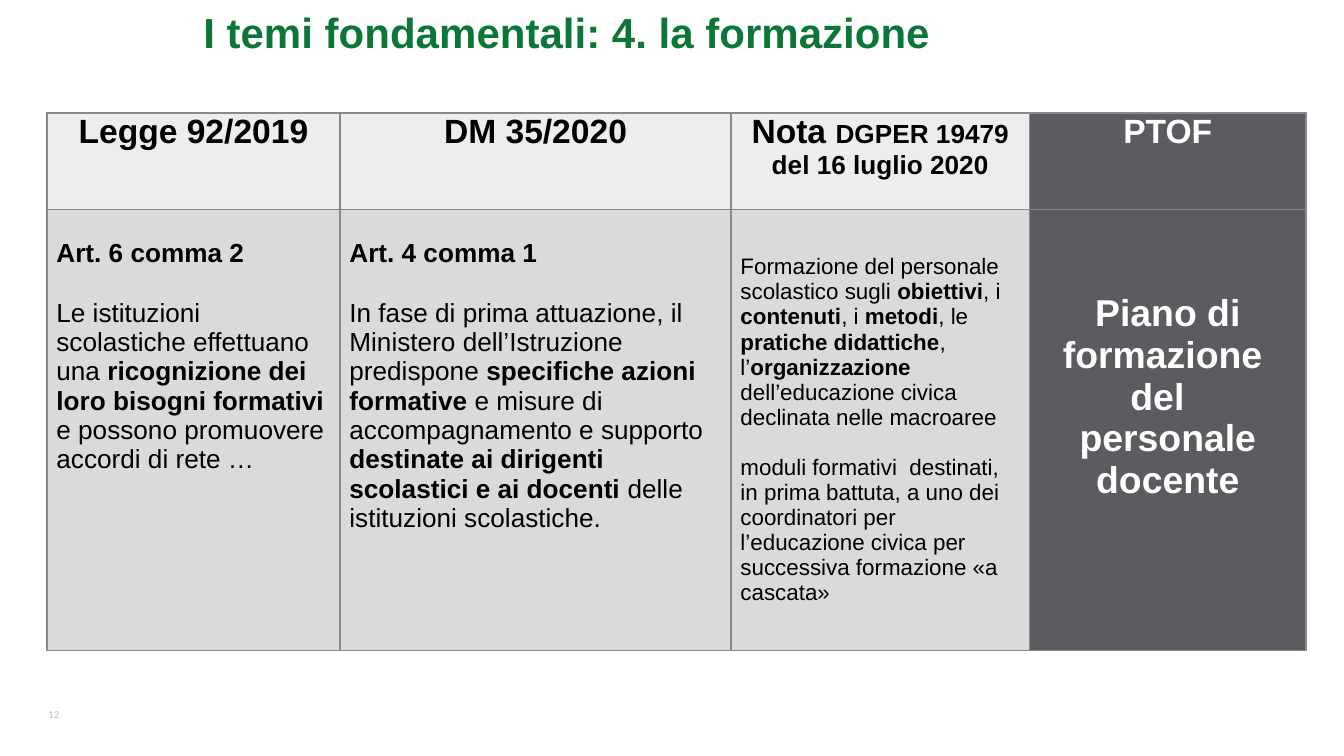
from typing import NamedTuple

from lxml import etree
from pptx import Presentation
from pptx import util as u
from pptx.dml.color import RGBColor
from pptx.enum import text
from pptx.oxml.ns import qn

LEFT, CENTER = text.PP_ALIGN.LEFT, text.PP_ALIGN.CENTER
TOP, MIDDLE = text.MSO_ANCHOR.TOP, text.MSO_ANCHOR.MIDDLE
BORDER = "87898B"
SLIDE_WIDTH = 10


class Line(NamedTuple):
    words: str
    size: float
    bold: bool = False
    before: float = 0
    tail: str = ""
    tail_size: float = 14


class Cell(NamedTuple):
    lines: list[Line]
    fill: str
    color: str = "000000"
    align: text.PP_ALIGN = LEFT
    anchor: text.MSO_ANCHOR = TOP
    side: float = 0.07
    top: float = 0


def rgb(code: str) -> RGBColor:
    return RGBColor.from_string(code)


def write(frame, lines: list[Line], color: str, align, font: str = "Arial") -> None:
    for index, line in enumerate(lines):
        paragraph = frame.add_paragraph() if index else frame.paragraphs[0]
        paragraph.alignment = align
        paragraph.space_before = u.Pt(line.before)
        paragraph.font.name = font
        paragraph.font.size = u.Pt(line.size)
        paragraph.font.bold = line.bold
        paragraph.font.color.rgb = rgb(color)
        for position, words in enumerate(line.words.split("**")):
            if words:
                run = paragraph.add_run()
                run.text = words
                if position % 2:
                    run.font.bold = True
        if line.tail:
            run = paragraph.add_run()
            run.text = line.tail
            run.font.size = u.Pt(line.tail_size)


def add_borders(cell) -> None:
    properties = cell._tc.get_or_add_tcPr()
    for index, side in enumerate(("lnL", "lnR", "lnT", "lnB")):
        border = etree.Element(qn(f"a:{side}"), w=str(u.Pt(1)))
        fill = etree.SubElement(border, qn("a:solidFill"))
        etree.SubElement(fill, qn("a:srgbClr"), val=BORDER)
        properties.insert(index, border)


def fill_cell(cell, content: Cell) -> None:
    cell.fill.solid()
    cell.fill.fore_color.rgb = rgb(content.fill)
    cell.margin_left = cell.margin_right = u.Inches(content.side)
    cell.margin_top, cell.margin_bottom = u.Inches(content.top), 0
    cell.vertical_anchor = content.anchor
    write(cell.text_frame, content.lines, content.color, content.align)
    add_borders(cell)


def add_label(slide, box: tuple, line: Line, color: str, align, font: str, wrap: bool) -> None:
    frame = slide.shapes.add_textbox(*map(u.Inches, box)).text_frame
    frame.margin_left = frame.margin_right = frame.margin_top = frame.margin_bottom = 0
    frame.word_wrap = wrap
    frame.vertical_anchor = MIDDLE
    write(frame, [line], color, align, font)


def header(words: str, fill: str = "EDEDEE", color: str = "000000", tail: str = "") -> Cell:
    return Cell([Line(words, 18, True, tail=tail)], fill, color, CENTER, side=0.05)


def article(title: str, *body: str) -> Cell:
    lines = [Line(title, 14, True)]
    lines += [Line(words, 14, before=0 if index else 16) for index, words in enumerate(body)]
    return Cell(lines, "D9DADA", top=0.22)


HEADERS = [
    header("Legge 92/2019"),
    header("DM 35/2020"),
    header("Nota ", tail="DGPER 19479 del 16 luglio 2020"),
    header("PTOF", "5C5B5F", "FFFFFF"),
]
BODY = [
    article(
        "Art. 6 comma 2",
        "Le istituzioni scolastiche effettuano una **ricognizione dei loro bisogni "
        "formativi **e possono promuovere accordi di rete …",
    ),
    article(
        "Art. 4 comma 1",
        "In fase di prima attuazione, il Ministero dell’Istruzione predispone "
        "**specifiche azioni formative **e misure di accompagnamento e supporto "
        "**destinate ai dirigenti scolastici e ai docenti** delle",
        "istituzioni scolastiche.",
    ),
    Cell(
        [
            Line(
                "Formazione del personale scolastico sugli **obiettivi**, i **contenuti**, "
                "i **metodi**, le **pratiche didattiche**,",
                12,
            ),
            Line("l’**organizzazione **dell’educazione civica declinata nelle macroaree", 12),
            Line(
                "moduli formativi  destinati, in prima battuta, a uno dei coordinatori per "
                "l’educazione civica per successiva formazione «a cascata»",
                12,
                before=13.5,
            ),
        ],
        "D9DADA",
        anchor=MIDDLE,
    ),
    Cell(
        [Line(words, 20, True) for words in ("Piano di formazione ", "del  ", "personale docente")],
        "5C5B5F",
        "FFFFFF",
        CENTER,
        top=0.62,
    ),
]


def main() -> None:
    presentation = Presentation()
    presentation.slide_width = u.Inches(SLIDE_WIDTH)
    presentation.slide_height = u.Inches(SLIDE_WIDTH * 9 / 16)
    slide = presentation.slides.add_slide(presentation.slide_layouts[6])

    add_label(slide, (0.36, 5.24, 0.35, 0.16), Line("12", 5), "B9B8BB", LEFT, "Lato", False)

    frame = slide.shapes.add_table(
        2, 4, u.Inches(0.35), u.Inches(0.84), u.Inches(9.37), u.Inches(4)
    )
    table = frame.table
    table.first_row = table.horz_banding = False
    for column, width in zip(table.columns, (2.18, 2.91, 2.22, 2.06)):
        column.width = u.Inches(width)
    for row, height, contents in zip(table.rows, (0.72, 3.28), (HEADERS, BODY)):
        row.height = u.Inches(height)
        for cell, content in zip(row.cells, contents):
            fill_cell(cell, content)

    title = Line("I temi fondamentali: 4. la formazione", 22.5, True)
    add_label(slide, (0.43, 0, 7.58, 0.47), title, "0A7736", CENTER, "Arial", True)
    presentation.save("out.pptx")


if __name__ == "__main__":
    main()
